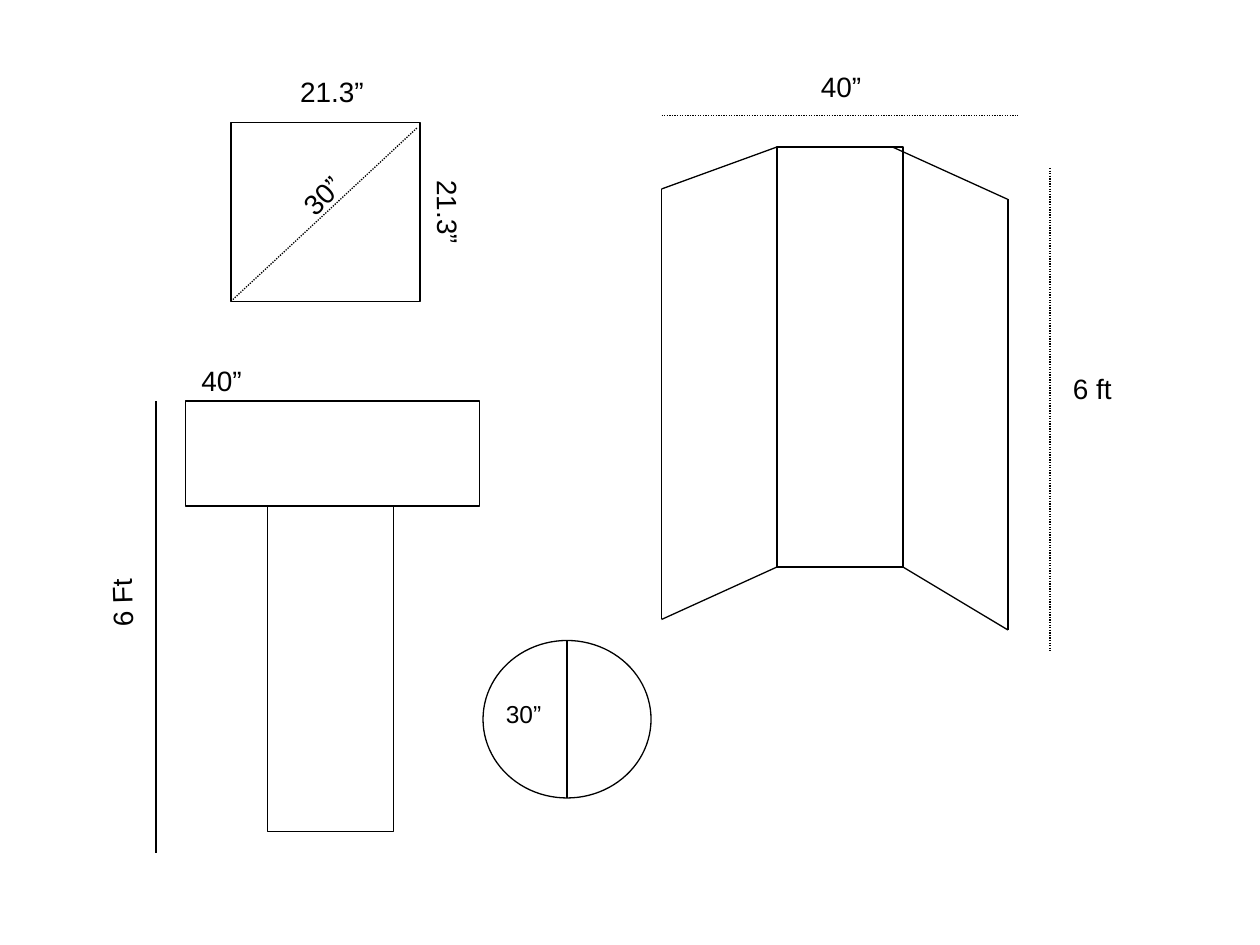
import itertools

import pptx
import pptx.dml.color
import pptx.enum.dml
import pptx.enum.shapes
import pptx.enum.text
import pptx.oxml.ns
import pptx.util

COLORS = {"ink": "000000", "paper": "FFFFFF"}
FONT = "Arial"
CELL = pptx.util.Inches(1) / 12  # the slide is a grid of 120 columns by 90 rows
SHAPE = pptx.enum.shapes.MSO_SHAPE


def color(name):
    return pptx.dml.color.RGBColor.from_string(COLORS[name])


def cells(*lengths):
    return [round(n * CELL) for n in lengths]


def set_line(line):
    line.color.rgb = color("ink")
    line.width = pptx.util.Pt(0.75)


def add_outline(s, kind, x, y, w, h):
    sp = s.shapes.add_shape(kind, *cells(x, y, w, h))
    sp.shadow.inherit = False
    sp.fill.background()
    set_line(sp.line)


def add_line(s, start, end, dotted=False):
    cn = s.shapes.add_connector(
        pptx.enum.shapes.MSO_CONNECTOR.STRAIGHT, *cells(*start, *end))
    set_line(cn.line)
    if dotted:
        cn.line.dash_style = pptx.enum.dml.MSO_LINE.ROUND_DOT
    props = cn._element.spPr
    props.append(props.makeelement(pptx.oxml.ns.qn("a:effectLst"), {}))


def add_label(s, text, x, y, w, h=4.4, size=16, rotation=0, wrap=True):
    sp = s.shapes.add_textbox(*cells(x, y, w, h))
    sp.rotation = rotation
    tf = sp.text_frame
    tf.word_wrap = wrap
    tf.auto_size = pptx.enum.text.MSO_AUTO_SIZE.SHAPE_TO_FIT_TEXT
    tf.text = text
    font = tf.paragraphs[0].runs[0].font
    font.name = FONT
    font.size = pptx.util.Pt(size)
    font.color.rgb = color("ink")


def draw_square_top(s, x, y, w, h):
    add_outline(s, SHAPE.RECTANGLE, x, y, w, h)
    add_line(s, (x, y + h), (x + w - 0.3, y + 0.5), dotted=True)
    add_label(s, "21.3”", x + 5.4, y - 5.2, 8.5, wrap=False)
    add_label(s, "21.3”", x + 15.2, y + 7.6, 11, rotation=89.4)
    add_label(s, "30”", x + 5, y + 3.4, 10, rotation=315.2)


def draw_table_front(s, x, y, w, h):
    top_h, leg_w = 10, 12
    add_outline(s, SHAPE.RECTANGLE, x, y, w, top_h)
    add_outline(s, SHAPE.RECTANGLE, x + (w - leg_w) / 2 - 0.2, y + top_h,
                leg_w, h - top_h)
    add_label(s, "40”", x + 0.33, y - 4.2, 12)
    add_line(s, (x - 2.8, y), (x - 2.8, y + h + 2))
    add_label(s, "6 Ft", x - 13.1, y + 13.6, 13.8, rotation=268.3)


def draw_round_base(s, x, y, w, h):
    add_outline(s, SHAPE.OVAL, x, y, w, h)
    add_line(s, (x + w / 2, y), (x + w / 2, y + h))
    add_label(s, "30”", x + 1, y + 5, 6, h=4, size=14)


def draw_folding_screen(s, x, y, w, h):
    """Centre panel with two open wings; the box spans all three."""
    panel_x, panel_w, panel_h = 11, 12, 40
    add_outline(s, SHAPE.RECTANGLE, x + panel_x, y, panel_w, panel_h)
    left_wing = [(panel_x, 0), (0, 4), (0, h - 1), (panel_x, panel_h)]
    right_wing = [(panel_x + panel_w - 1, 0), (w, 5), (w, h),
                  (panel_x + panel_w, panel_h)]
    for wing in (left_wing, right_wing):
        corners = [(x + dx, y + dy) for dx, dy in wing]
        for start, end in itertools.pairwise(corners):
            add_line(s, start, end)
    add_line(s, (x + w + 4, y + 2), (x + w + 4, y + h + 2), dotted=True)
    add_line(s, (x, y - 3), (x + w + 1, y - 3), dotted=True)
    add_label(s, "40”", x + 14, y - 8, 18)
    add_label(s, "6 ft", x + w + 5, y + 20.8, 12)


def main():
    prs = pptx.Presentation()
    prs.slide_width, prs.slide_height = cells(120, 90)
    s = prs.slides.add_slide(prs.slide_layouts[6])
    s.background.fill.solid()
    s.background.fill.fore_color.rgb = color("paper")
    draw_square_top(s, 22, 11.7, 18, 17)
    draw_table_front(s, 17.67, 38.2, 28, 41)
    draw_round_base(s, 46, 61, 16, 15)
    draw_folding_screen(s, 63, 14, 33, 46)
    prs.save("out.pptx")


if __name__ == "__main__":
    main()
